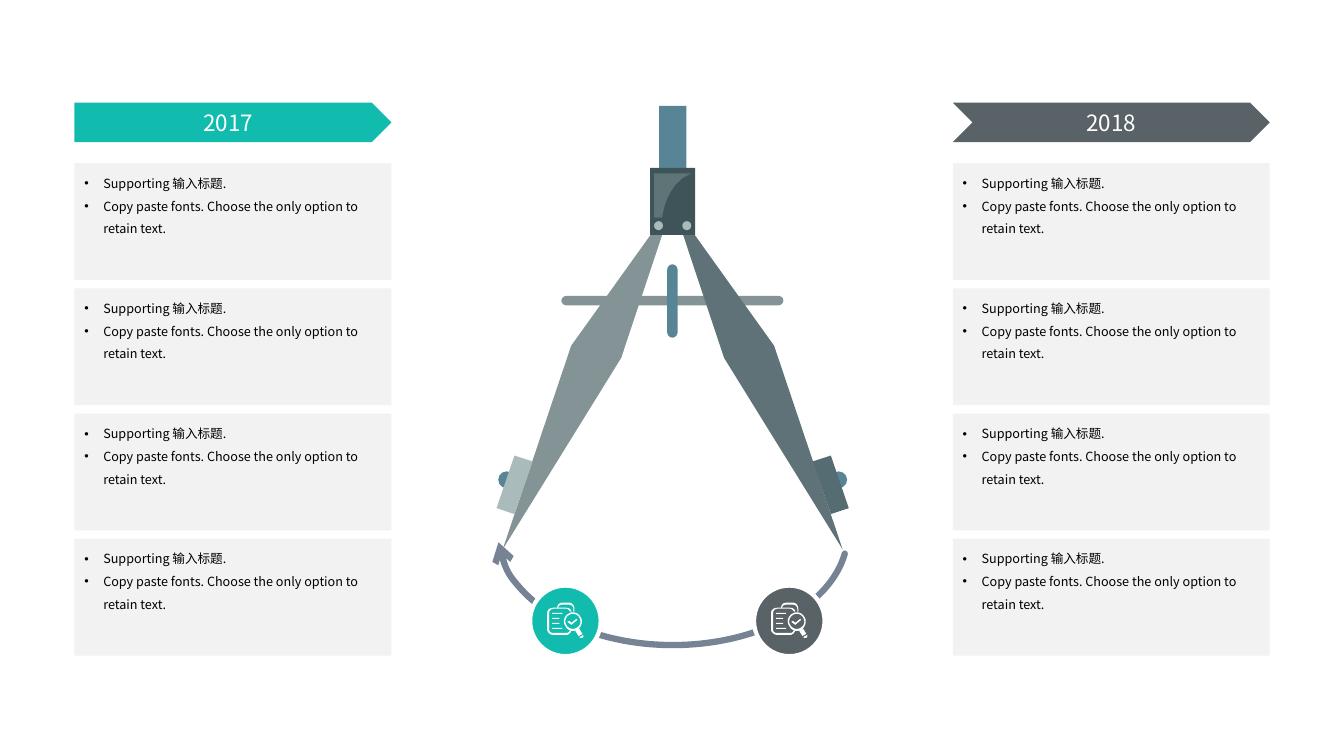
import pptx
import pptx.util
import pptx.dml.color
import pptx.enum.shapes
import pptx.enum.text
import lxml.etree

Pt = pptx.util.Pt
RGBColor = pptx.dml.color.RGBColor
SHAPES = pptx.enum.shapes.MSO_SHAPE
ALIGN = pptx.enum.text.PP_ALIGN
ANCHOR = pptx.enum.text.MSO_ANCHOR
DRAWING_NS = "{http://schemas.openxmlformats.org/drawingml/2006/main}"

TEAL = RGBColor(0x11, 0xBC, 0xAE)
CHARCOAL = RGBColor(0x58, 0x62, 0x67)
CARD_GREY = RGBColor(0xF2, 0xF2, 0xF2)
ARC_BLUE = RGBColor(0x76, 0x83, 0x94)
STEEL = RGBColor(0x57, 0x85, 0x95)
LIGHT_LEG = RGBColor(0x83, 0x93, 0x96)
DARK_LEG = RGBColor(0x5F, 0x72, 0x78)
PALE = RGBColor(0xAA, 0xBB, 0xBC)
DARK_GRIP = RGBColor(0x54, 0x6C, 0x72)
HINGE = RGBColor(0x3E, 0x54, 0x59)
HINGE_SHINE = RGBColor(0x5F, 0x74, 0x77)
WHITE = RGBColor(0xFF, 0xFF, 0xFF)
BLACK = RGBColor(0, 0, 0)

AXIS = 480.5  # vertical line of symmetry of the compass
LEG = [(0.3, 146.2), (72.5, 247), (121.4, 392.4), (36.7, 255.6)]
GRIP = [(100, 329.6), (113, 325.4), (125.8, 363), (113, 367.2)]
SHINE = [[(493.9, 123.8), (467.3, 123.8), (467.3, 155.5), (473, 155.5),
          (473, 155.5, 475.2, 131, 493.9, 123.8)]]

# Contours in hundredths of an inch: pairs are line ends, sextuples are curves.
ICON_UNIT = 0.72
DOCUMENTS = [
    (22, 28), (23, 28, 23, 28, 24, 28), (23, 30, 21, 32, 19, 32), (6, 32),
    (3, 32, 0, 29, 0, 27), (0, 10), (0, 7, 3, 5, 6, 5), (10, 5),
    (10, 2, 12, 0, 15, 0), (22, 0), (25, 0, 27, 3, 27, 6), (27, 9),
    (27, 9, 26, 9, 26, 9), (26, 6), (26, 4, 24, 2, 22, 2), (15, 2),
    (13, 2, 11, 3, 11, 5), (19, 5), (22, 5, 24, 7, 24, 9),
    (24, 9, 23, 9, 23, 9), (22, 8, 21, 6, 19, 6), (6, 6),
    (4, 6, 2, 8, 2, 10), (2, 27), (2, 29, 4, 30, 6, 30), (19, 30),
    (21, 30, 22, 29, 22, 28)]
LENS = [
    [(30, 27), (26, 29, 20, 28, 18, 23), (15, 19, 17, 13, 21, 11),
     (25, 8, 31, 10, 33, 14), (36, 18, 34, 24, 30, 27)],
    [(29, 25), (33, 23, 34, 19, 32, 15), (30, 11, 25, 10, 22, 12),
     (18, 14, 17, 19, 19, 22), (21, 26, 26, 27, 29, 25)]]
HANDLE = [
    [(32, 26), (28, 28), (31, 33), (35, 31)],
    [(36, 32), (32, 34), (32, 35, 34, 35, 35, 35), (36, 34, 36, 33, 36, 32)]]
CHECK = [(24, 20), (22, 18), (20, 19), (24, 22), (30, 17), (29, 16)]
TEXT_LINES = [[(5, y), (right, y), (right, y + 1), (5, y + 1)]
              for y, right in [(10, 15), (15, 12), (20, 12), (25, 15)]]
ICON = [DOCUMENTS, *LENS, *HANDLE, CHECK, *TEXT_LINES]

CARD_LINES = ["Supporting 输入标题.",
              "Copy paste fonts. Choose the only option to retain text."]


def flatten(contour, steps=8):
    """Return the contour's points with each cubic curve cut into short lines."""
    points = [contour[0]]
    for segment in contour[1:]:
        if len(segment) == 2:
            points.append(segment)
            continue
        nodes = [points[-1], segment[:2], segment[2:4], segment[4:]]
        for step in range(1, steps + 1):
            t = step / steps
            weights = [(1 - t) ** 3, 3 * t * (1 - t) ** 2, 3 * t * t * (1 - t), t ** 3]
            points.append(tuple(sum(w * node[axis] for w, node in zip(weights, nodes))
                                for axis in (0, 1)))
    return points


class CompassSlide:
    font = "Noto Sans CJK SC"

    def __init__(self, slide):
        self.shapes = slide.shapes

    def paint(self, shape, fill, line=None, weight=0):
        shape.shadow.inherit = False
        if fill is None:
            shape.fill.background()
        else:
            shape.fill.solid()
            shape.fill.fore_color.rgb = fill
        if line is None:
            shape.line.fill.background()
        else:
            shape.line.color.rgb = line
            shape.line.width = Pt(weight)
        return shape

    def preset(self, kind, left, top, width, height, fill, line=None, weight=0):
        shape = self.shapes.add_shape(kind, Pt(left), Pt(top), Pt(width), Pt(height))
        return self.paint(shape, fill, line, weight)

    def dot(self, x, y, radius, fill, line=None, weight=0):
        self.preset(SHAPES.OVAL, x - radius, y - radius, 2 * radius, 2 * radius,
                    fill, line, weight)

    def rod(self, left, top, width, height, fill):
        """Add a bar with fully rounded ends."""
        bar = self.preset(SHAPES.ROUNDED_RECTANGLE, left, top, width, height, fill)
        bar.adjustments[0] = 0.5

    def outline(self, contours, fill, left=0, top=0, unit=1):
        builder = None
        for contour in contours:
            points = [(Pt(left + x * unit), Pt(top + y * unit))
                      for x, y in flatten(contour)]
            if builder is None:
                builder = self.shapes.build_freeform(*points[0])
            else:
                builder.move_to(*points[0])
            builder.add_line_segments(points[1:], close=True)
        self.paint(builder.convert_to_shape(), fill)

    def sweep(self, left, top, width, height):
        """Add the arc that swings from the right leg to the left one."""
        arc = self.preset(SHAPES.ARC, left, top, width, height, None, ARC_BLUE, 4.5)
        arc.adjustments[0] = 3.95
        arc.adjustments[1] = 106.31
        stroke = arc.element.spPr.find(DRAWING_NS + "ln")
        stroke.set("cap", "rnd")
        lxml.etree.SubElement(stroke, DRAWING_NS + "round")
        lxml.etree.SubElement(stroke, DRAWING_NS + "tailEnd", type="arrow")

    def badge(self, x, y, fill):
        self.dot(x, y, 25.2, fill, WHITE, 3)
        self.outline(ICON, WHITE, x - 13, y - 13, ICON_UNIT)

    def add_text(self, paragraph, text, size, color):
        run = paragraph.add_run()
        run.text = text
        run.font.name = self.font
        run.font.size = Pt(size)
        run.font.color.rgb = color
        lxml.etree.SubElement(run._r.get_or_add_rPr(), DRAWING_NS + "ea",
                              typeface=self.font)

    def header(self, kind, left, year, fill):
        frame = self.preset(kind, left, 73.4, 226.4, 28.1, fill).text_frame
        frame.word_wrap = False
        frame.vertical_anchor = ANCHOR.MIDDLE
        frame.paragraphs[0].alignment = ALIGN.CENTER
        self.add_text(frame.paragraphs[0], year, 16, WHITE)

    def card(self, left, top):
        frame = self.preset(SHAPES.RECTANGLE, left, top, 226.4, 83.5, CARD_GREY).text_frame
        frame.word_wrap = True
        frame.vertical_anchor = ANCHOR.TOP
        for index, text in enumerate(CARD_LINES):
            paragraph = frame.add_paragraph() if index else frame.paragraphs[0]
            paragraph.alignment = ALIGN.LEFT
            paragraph.line_spacing = 1.5
            properties = paragraph._p.get_or_add_pPr()
            properties.set("marL", str(Pt(13.5)))
            properties.set("indent", str(Pt(-13.5)))
            lxml.etree.SubElement(properties, DRAWING_NS + "buFont", typeface="Arial")
            lxml.etree.SubElement(properties, DRAWING_NS + "buChar", char="•")
            self.add_text(paragraph, text, 9, BLACK)

    def compass(self):
        self.rod(401, 211.4, 158.6, 6.7, LIGHT_LEG)
        self.preset(SHAPES.RECTANGLE, 470.9, 75.6, 19.4, 45, STEEL)
        sides = [(1, DARK_LEG, DARK_GRIP), (-1, LIGHT_LEG, PALE)]
        for side, leg_color, grip_color in sides:
            self.dot(AXIS + side * 118.6, 342.7, 6, STEEL)
            for part, color in [(LEG, leg_color), (GRIP, grip_color)]:
                self.outline([[(AXIS + side * x, y) for x, y in part]], color)
        self.preset(SHAPES.RECTANGLE, 464.4, 120, 32.2, 47.9, HINGE)
        for side in (-1, 1):
            self.dot(AXIS + side * 10.1, 161.2, 3.2, PALE)
        self.outline(SHINE, HINGE_SHINE)
        self.rod(476.6, 188.8, 7.4, 52.4, STEEL)


def main():
    presentation = pptx.Presentation()
    presentation.slide_width = Pt(960)
    presentation.slide_height = Pt(540)
    page = CompassSlide(presentation.slides.add_slide(presentation.slide_layouts[6]))

    page.sweep(355.7, 301.7, 249.8, 159.1)
    page.compass()
    columns = [(53.2, "2017", TEAL, SHAPES.PENTAGON, 403.9),
               (680.6, "2018", CHARCOAL, SHAPES.CHEVRON, 563.8)]
    for left, year, color, header_kind, badge_x in columns:
        page.badge(badge_x, 443.5, color)
        page.header(header_kind, left, year, color)
        for row in range(4):
            page.card(left, 116.6 + row * 89.4)

    presentation.save("out.pptx")


if __name__ == "__main__":
    main()
